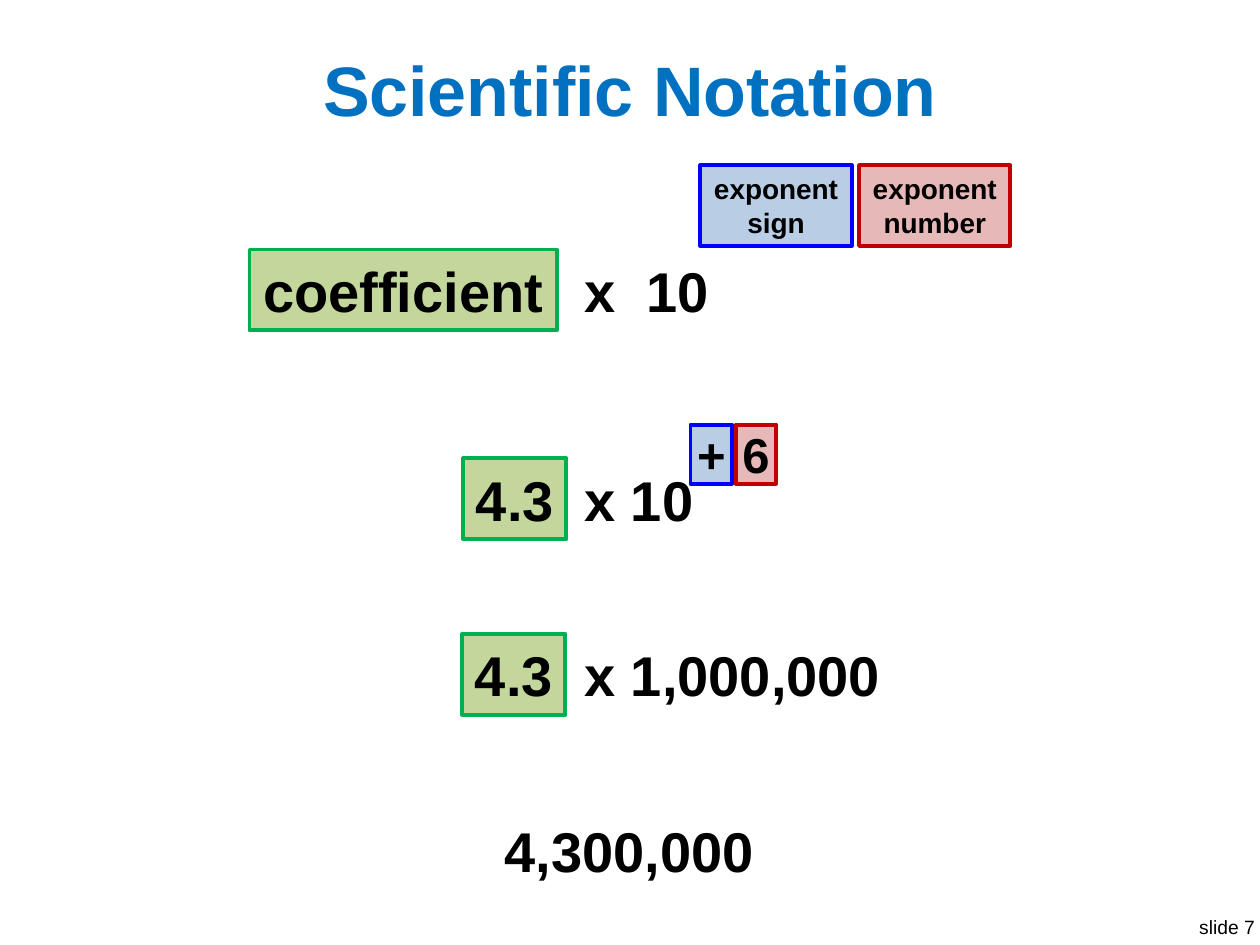
"""Build the slide that breaks scientific notation into its parts."""
from dataclasses import dataclass

from pptx import Presentation
from pptx.dml.color import RGBColor
from pptx.enum.shapes import MSO_SHAPE
from pptx.enum.text import MSO_ANCHOR, PP_ALIGN
from pptx.util import Cm, Pt

RECTANGLE = MSO_SHAPE.RECTANGLE
MIDDLE = MSO_ANCHOR.MIDDLE
LEFT, CENTER, RIGHT = PP_ALIGN.LEFT, PP_ALIGN.CENTER, PP_ALIGN.RIGHT
TITLE_ONLY = 5
FONT = "Arial"
COLORS = {
    "title": "0070C0",
    "text": "000000",
    "coefficient": "C3D69B",
    "coefficient line": "00B050",
    "sign": "B9CDE5",
    "sign line": "0000FF",
    "number": "E6B9B8",
    "number line": "C00000",
}
ROW_HEIGHT = 1.63
FORMULA_TOP = 5.03
EXAMPLE_TOP, EXPANDED_TOP, RESULT_TOP = (9.24 + 3.54 * row for row in range(3))
LABEL_TOP, EXPONENT_TOP = 3.33, 8.56
FACTOR_LEFT = 11.53


@dataclass(frozen=True)
class Term:
    """One piece of notation, boxed when it has a role; lengths in cm."""

    text: str
    left: float
    top: float
    width: float
    height: float = ROW_HEIGHT
    role: str = ""
    size: int = 32
    align: PP_ALIGN = CENTER
    bold: bool = True
    inset: float = 0.25


TERMS = [
    Term("coefficient", 5.03, FORMULA_TOP, 6.2, role="coefficient"),
    Term("x  10", FACTOR_LEFT, FORMULA_TOP, 3.05, align=LEFT),
    Term("exponent\nsign", 14.12, LABEL_TOP, 3.05, role="sign", size=16),
    Term("exponent\nnumber", 17.32, LABEL_TOP, 3.05, role="number", size=16),
    Term("4.3", 9.34, EXAMPLE_TOP, 2.08, role="coefficient"),
    Term("x 10", FACTOR_LEFT, EXAMPLE_TOP, 2.72, align=LEFT),
    Term("+", 13.92, EXPONENT_TOP, 0.84, 1.19, "sign", 28, inset=0.13),
    Term("6", 14.83, EXPONENT_TOP, 0.82, 1.19, "number", 28, inset=0.13),
    Term("4.3", 9.32, EXPANDED_TOP, 2.08, role="coefficient"),
    Term("x 1,000,000", FACTOR_LEFT, EXPANDED_TOP, 6.53, align=LEFT),
    Term("4,300,000", 9.91, RESULT_TOP, 5.56),
    Term("slide 7", 23.5, 18.31, 1.9, 0.74, size=11, align=RIGHT, bold=False,
         inset=0.1),
]


def rgb(name: str) -> RGBColor:
    """Look up a named colour."""
    return RGBColor.from_string(COLORS[name])


def format_text(frame, size: int, color: str, align: PP_ALIGN, bold: bool) -> None:
    """Format every paragraph of a text frame alike."""
    frame.vertical_anchor = MIDDLE
    for paragraph in frame.paragraphs:
        paragraph.alignment = align
        for run in paragraph.runs:
            run.font.name = FONT
            run.font.size = Pt(size)
            run.font.bold = bold
            run.font.color.rgb = rgb(color)


def draw_term(slide, term: Term) -> None:
    """Draw a term as a coloured box or as plain text."""
    bounds = [Cm(length) for length in (term.left, term.top, term.width, term.height)]
    if term.role:
        holder = slide.shapes.add_shape(RECTANGLE, *bounds)
        holder.shadow.inherit = False
        holder.fill.solid()
        holder.fill.fore_color.rgb = rgb(term.role)
        holder.line.color.rgb = rgb(f"{term.role} line")
        holder.line.width = Pt(2.25)
    else:
        holder = slide.shapes.add_textbox(*bounds)
    frame = holder.text_frame
    frame.text = term.text
    frame.word_wrap = False
    frame.margin_left = frame.margin_right = Cm(term.inset)
    frame.margin_top = frame.margin_bottom = 0
    format_text(frame, term.size, "text", term.align, term.bold)


def draw_title(slide, text: str) -> None:
    """Fill and place the title placeholder."""
    title = slide.shapes.title
    title.left, title.top, title.width, title.height = (
        Cm(length) for length in (0.51, 0.76, 24.38, 2.03))
    title.text_frame.text = text
    format_text(title.text_frame, 40, "title", CENTER, True)


def main() -> None:
    """Create and save the presentation."""
    presentation = Presentation()
    presentation.slide_width, presentation.slide_height = Cm(25.4), Cm(19.05)
    slide = presentation.slides.add_slide(presentation.slide_layouts[TITLE_ONLY])
    draw_title(slide, "Scientific Notation")
    for term in TERMS:
        draw_term(slide, term)
    presentation.save("out.pptx")


if __name__ == "__main__":
    main()
